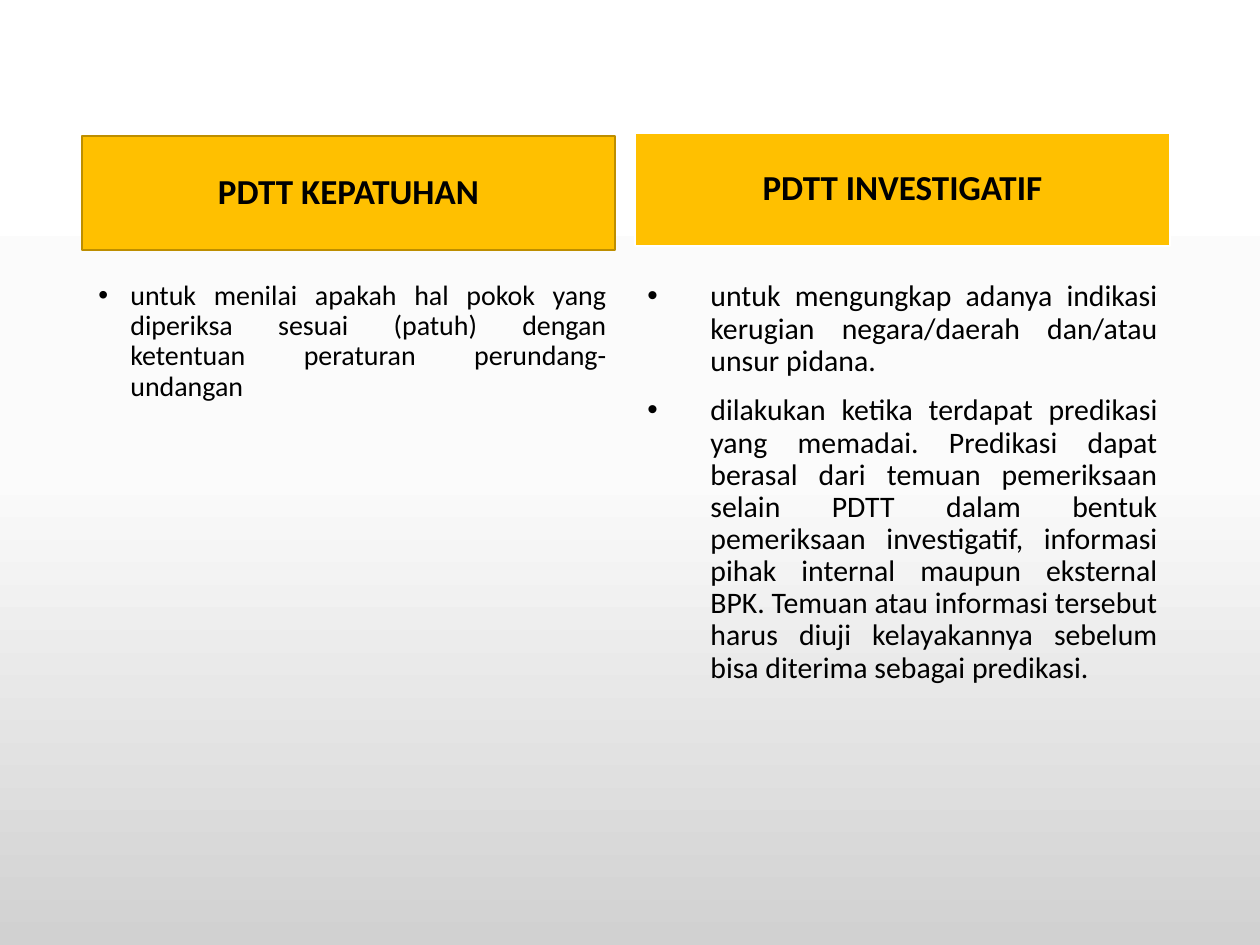
from copy import deepcopy

from pptx import Presentation
from pptx.dml.color import RGBColor
from pptx.enum.shapes import MSO_SHAPE
from pptx.enum.text import MSO_ANCHOR, PP_ALIGN
from pptx.oxml import parse_xml
from pptx.oxml.ns import nsdecls, qn
from pptx.util import Emu, Pt

RECT = MSO_SHAPE.RECTANGLE
MIDDLE = MSO_ANCHOR.MIDDLE
CENTER, JUSTIFY = PP_ALIGN.CENTER, PP_ALIGN.JUSTIFY
SCALE = 914400 / 126


def px(n):
    return Emu(round(n * SCALE))


def rgb(code):
    return RGBColor.from_string(code)


class Deck:
    """Holds the style and the current slide."""

    font, ink, gold = "Calibri", "000000", "FFC000"

    def __init__(self, wide, high):
        self.file = Presentation()
        self.file.slide_width, self.file.slide_height = px(wide), px(high)
        self.slide = self.file.slides.add_slide(self.file.slide_layouts[6])

    def shade(self, stops, angle):
        fill = self.slide.background.fill
        fill.gradient()
        fill.gradient_angle = angle
        group = self.slide.element.find(".//" + qn("a:gsLst"))
        while len(group) < len(stops):
            group.append(deepcopy(group[0]))
        for stop, (place, color) in zip(fill.gradient_stops, stops):
            stop.position = place
            stop.color.rgb = rgb(color)

    def label(self, para, text, size, align, bold=False):
        para.alignment = align
        para.line_spacing = 0.9
        para.space_before = Pt(10)
        run = para.add_run()
        run.text = text
        run.font.name, run.font.size, run.font.bold = self.font, Pt(size), bold
        run.font.color.rgb = rgb(self.ink)

    def header(self, box, text, edge, width):
        shape = self.slide.shapes.add_shape(RECT, *map(px, box))
        shape.shadow.inherit = False
        shape.fill.solid()
        shape.fill.fore_color.rgb = rgb(self.gold)
        shape.line.color.rgb = rgb(edge)
        shape.line.width = Pt(width)
        frame = shape.text_frame
        frame.vertical_anchor = MIDDLE
        self.label(frame.paragraphs[0], text, 20, CENTER, True)

    def bullets(self, box, items, size, indent):
        frame = self.slide.shapes.add_textbox(*map(px, box)).text_frame
        frame.word_wrap = True
        for i, item in enumerate(items):
            para = frame.add_paragraph() if i else frame.paragraphs[0]
            self.label(para, item, size, JUSTIFY)
            props = para._p.get_or_add_pPr()
            props.set("marL", str(px(indent)))
            props.set("indent", str(-px(indent)))
            for tag in ('buFont typeface="Arial"', 'buChar char="•"'):
                props.append(parse_xml(f"<a:{tag} {nsdecls('a')}/>"))


def main():
    deck = Deck(1260, 945)
    deck.shade([(0, "FFFFFF"), (0.5, "FBFBFB"), (1, "D1D1D1")], 270)
    deck.header((82, 136, 533, 114), "PDTT KEPATUHAN", "BD8E00", 1)
    deck.bullets((86, 275, 533, 508), [
        "untuk menilai apakah hal pokok yang diperiksa sesuai (patuh) "
        "dengan ketentuan peraturan perundang-undangan",
    ], 16, 32)
    deck.header((635, 133, 535, 113), "PDTT INVESTIGATIF", "FFFFFF", 1.5)
    deck.bullets((635, 275, 535, 508), [
        "untuk mengungkap adanya indikasi kerugian negara/daerah "
        "dan/atau unsur pidana.",
        "dilakukan ketika terdapat predikasi yang memadai. Predikasi dapat "
        "berasal dari temuan pemeriksaan selain PDTT dalam bentuk "
        "pemeriksaan investigatif, informasi pihak internal maupun "
        "eksternal BPK. Temuan atau informasi tersebut harus diuji "
        "kelayakannya sebelum bisa diterima sebagai predikasi.",
    ], 17, 63)
    deck.file.save("out.pptx")


if __name__ == "__main__":
    main()
